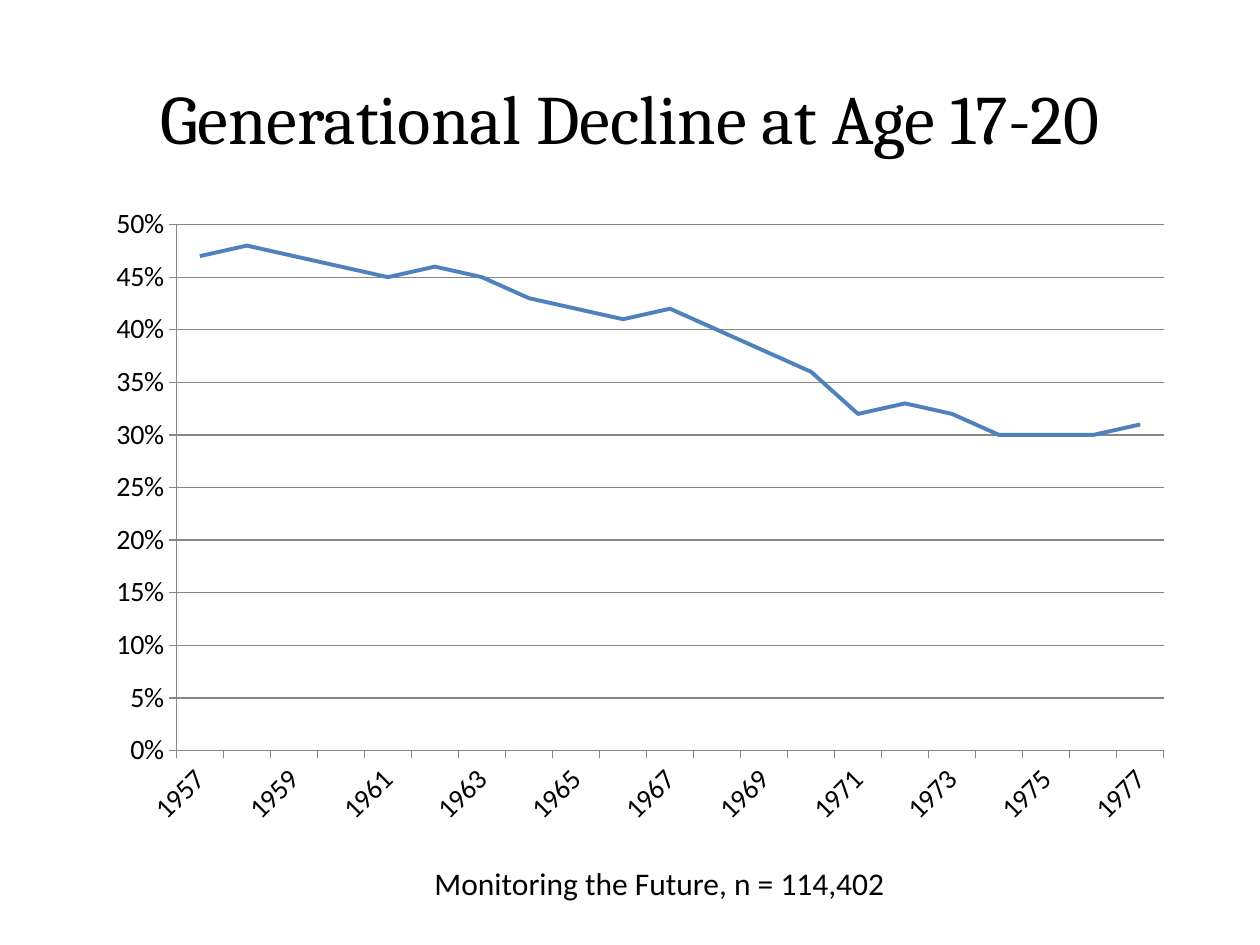
import pptx
import pptx.chart.data
import pptx.dml.color
import pptx.enum.chart
import pptx.enum.text
import pptx.oxml
import pptx.oxml.ns
import pptx.util

# Content
TITLE = "Generational Decline at Age 17-20"
CAPTION = "Monitoring the Future, n = 114,402"
FIRST_YEAR = 1957
PERCENTAGES = [47, 48, 47, 46, 45, 46, 45, 43, 42, 41, 42,
               40, 38, 36, 32, 33, 32, 30, 30, 30, 31]

# Format
COLORS = {"text": "000000", "line": "4F81BD", "axis": "868686"}
WIDTH, HEIGHT = 10, 7.5
TITLE_BOX = (0.05, 0.04, 0.9, 0.167)  # shares of the slide
CHART_BOX = (0.075, 0.207, 0.866, 0.683)
CAPTION_BOX = (0.177, 0.908, 0.693, 0.053)
PLOT_AREA = {"x": 0.075, "y": 0.045, "w": 0.905, "h": 0.815}  # shares of the chart


def color(name):
    return pptx.dml.color.RGBColor.from_string(COLORS[name])


def place(box):
    return [pptx.util.Inches(share * size)
            for share, size in zip(box, (WIDTH, HEIGHT) * 2)]


def write_text(shape, text, *, size, font, anchor):
    frame = shape.text_frame
    frame.word_wrap = True
    frame.vertical_anchor = anchor
    paragraph = frame.paragraphs[0]
    paragraph.alignment = pptx.enum.text.PP_ALIGN.CENTER
    run = paragraph.add_run()
    run.text = text
    run.font.size = pptx.util.Pt(size)
    run.font.name = font
    run.font.color.rgb = color("text")


def style_axis(axis):
    axis.major_tick_mark = pptx.enum.chart.XL_TICK_MARK.OUTSIDE
    axis.minor_tick_mark = pptx.enum.chart.XL_TICK_MARK.NONE
    axis.format.line.color.rgb = color("axis")
    axis.format.line.width = pptx.util.Pt(0.75)


def fix_plot_area(chart):
    plot_area = chart.plots[0]._element.getparent()
    for layout in plot_area.findall(pptx.oxml.ns.qn("c:layout")):
        plot_area.remove(layout)
    sizes = "".join(f'<c:{key} val="{share}"/>' for key, share in PLOT_AREA.items())
    plot_area.insert(0, pptx.oxml.parse_xml(
        f'<c:layout {pptx.oxml.ns.nsdecls("c")}><c:manualLayout>'
        '<c:layoutTarget val="inner"/><c:xMode val="edge"/><c:yMode val="edge"/>'
        f'{sizes}</c:manualLayout></c:layout>'))


def add_line_chart(slide):
    data = pptx.chart.data.CategoryChartData(number_format="0%")
    data.categories = [str(FIRST_YEAR + i) for i in range(len(PERCENTAGES))]
    data.add_series("Series 1", [value / 100 for value in PERCENTAGES])
    chart = slide.shapes.add_chart(
        pptx.enum.chart.XL_CHART_TYPE.LINE, *place(CHART_BOX), data).chart
    chart.has_legend = False
    chart.has_title = False
    chart.font.size = pptx.util.Pt(16)
    chart.font.name = "Calibri"
    chart.font.color.rgb = color("text")

    # Series
    chart.plots[0].vary_by_categories = False
    series = chart.plots[0].series[0]
    series.smooth = False
    series.marker.style = pptx.enum.chart.XL_MARKER_STYLE.NONE
    series.format.line.color.rgb = color("line")
    series.format.line.width = pptx.util.Pt(2.25)

    # Axes
    years, shares = chart.category_axis, chart.value_axis
    style_axis(years)
    style_axis(shares)
    shares.minimum_scale, shares.maximum_scale, shares.major_unit = 0, 0.5, 0.05
    shares.tick_labels.number_format = "0%"
    shares.tick_labels.number_format_is_linked = False
    shares.has_major_gridlines = True
    shares.major_gridlines.format.line.color.rgb = color("axis")
    shares.major_gridlines.format.line.width = pptx.util.Pt(0.75)

    # Slanted labels on every second year
    years.tick_labels.font.size = pptx.util.Pt(16)
    body = years._element.find(".//" + pptx.oxml.ns.qn("a:bodyPr"))
    body.set("rot", "-2700000")
    body.set("vert", "horz")
    skip = pptx.oxml.parse_xml(
        f'<c:tickLblSkip {pptx.oxml.ns.nsdecls("c")} val="2"/>')
    years._element.find(pptx.oxml.ns.qn("c:noMultiLvlLbl")).addprevious(skip)
    fix_plot_area(chart)


def main():
    presentation = pptx.Presentation()
    presentation.slide_width = pptx.util.Inches(WIDTH)
    presentation.slide_height = pptx.util.Inches(HEIGHT)
    slide = presentation.slides.add_slide(presentation.slide_layouts[5])
    anchors = pptx.enum.text.MSO_ANCHOR

    # Title
    title = slide.shapes.title
    title.left, title.top, title.width, title.height = place(TITLE_BOX)
    write_text(title, TITLE, size=39.6, font="Cambria", anchor=anchors.MIDDLE)

    # Chart and caption
    add_line_chart(slide)
    caption = slide.shapes.add_textbox(*place(CAPTION_BOX))
    write_text(caption, CAPTION, size=18, font="Calibri", anchor=anchors.TOP)

    presentation.save("out.pptx")


if __name__ == "__main__":
    main()
